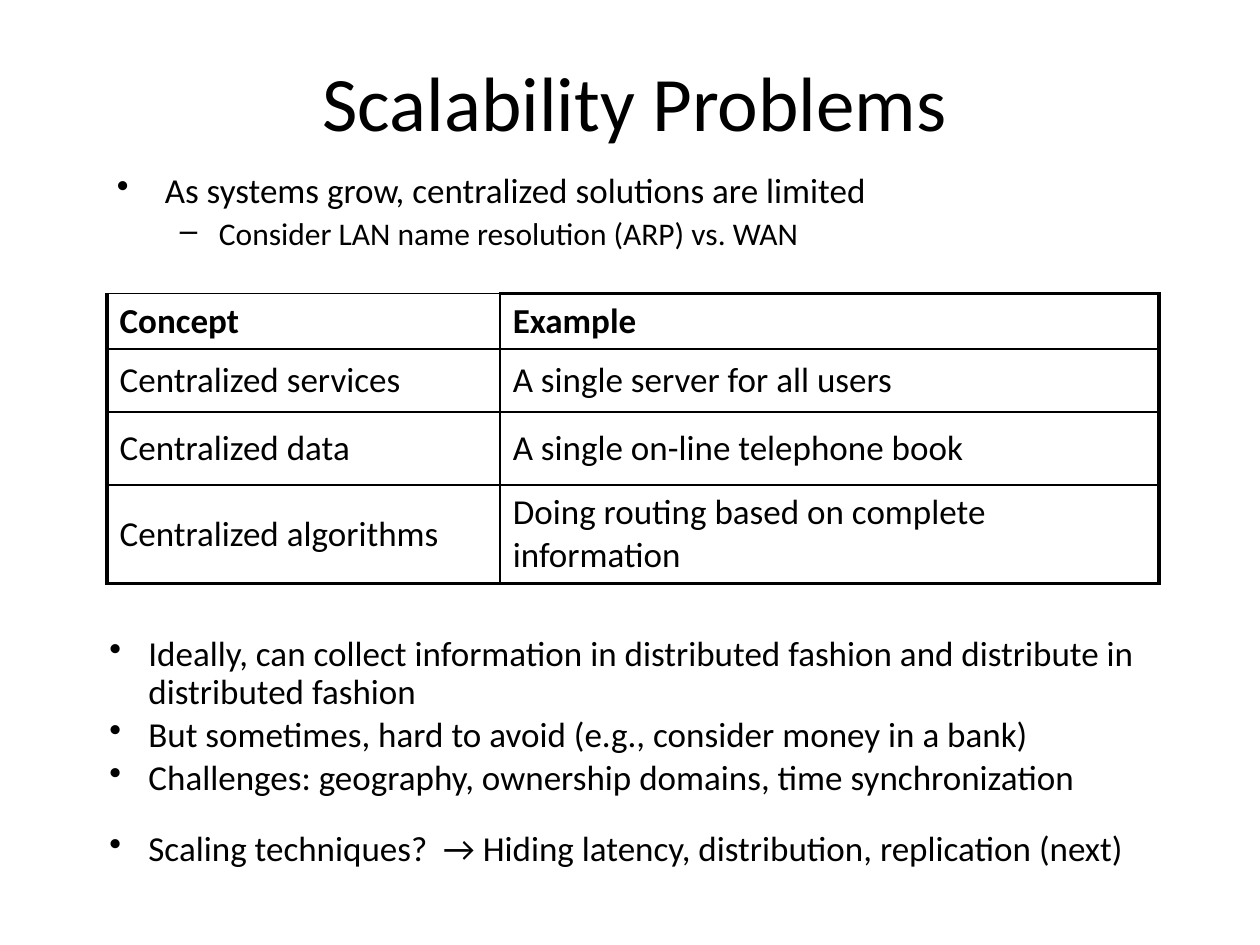
from lxml import etree
from pptx import Presentation
from pptx.dml.color import RGBColor
from pptx.enum import text
from pptx.oxml import ns
from pptx.util import Inches, Pt

BLACK = RGBColor(0, 0, 0)
WHITE = RGBColor(255, 255, 255)
FONT = "Calibri"
THIN, THICK = 1, 2.25
COLUMN_WIDTHS = [3.12, 5.23]
ROW_HEIGHTS = [0.44, 0.5, 0.58, 0.78]
CONCEPTS = [
    ("Concept", "Example"),
    ("Centralized services", "A single server for all users"),
    ("Centralized data", "A single on-line telephone book"),
    ("Centralized algorithms", "Doing routing based on complete information"),
]
INTRODUCTION = [
    ("As systems grow, centralized solutions are limited", "•", 20, 0.38, 0.38, 4),
    ("Consider LAN name resolution (ARP) vs. WAN", "–", 18, 0.81, 0.31, 4),
]
CONCLUSIONS = [
    ("Ideally, can collect information in distributed fashion and distribute in "
     "distributed fashion", 3),
    ("But sometimes, hard to avoid (e.g., consider money in a bank)", 3),
    ("Challenges: geography, ownership domains, time synchronization", 3),
    ("Scaling techniques?  → Hiding latency, distribution, replication (next)", 19),
]


def style(para, size, bold=False):
    """Set the common font on a paragraph."""
    font = para.font
    font.name, font.size, font.bold = FONT, Pt(size), bold
    font.color.rgb = BLACK


def add_box(page, left, top, width, height):
    """Add a wrapping text box and return its text frame."""
    box = page.shapes.add_textbox(Inches(left), Inches(top), Inches(width), Inches(height))
    box.text_frame.word_wrap = True
    return box.text_frame


def add_title(page, words):
    """Add the centred slide title."""
    frame = add_box(page, 0.79, 0.17, 8.5, 1.25)
    frame.vertical_anchor = text.MSO_ANCHOR.MIDDLE
    para = frame.paragraphs[0]
    para.text = words
    para.alignment = text.PP_ALIGN.CENTER
    style(para, 44)


def add_bullets(page, place, items):
    """Add a bulleted list with hanging indents."""
    frame = add_box(page, *place)
    for index, (words, mark, size, margin, hang, before) in enumerate(items):
        para = frame.add_paragraph() if index else frame.paragraphs[0]
        para.text = words
        para.line_spacing = 0.9
        para.space_before = Pt(before)
        style(para, size)
        properties = para._p.get_or_add_pPr()
        properties.set("marL", str(Inches(margin)))
        properties.set("indent", str(-Inches(hang)))
        bullet = etree.Element(ns.qn("a:buChar"), char=mark)
        properties.find(ns.qn("a:defRPr")).addprevious(bullet)


def set_borders(cell, widths):
    """Draw black cell borders, given left, right, top and bottom widths."""
    properties = cell._tc.get_or_add_tcPr()
    for index, (side, width) in enumerate(zip("LRTB", widths)):
        line = etree.Element(ns.qn(f"a:ln{side}"), w=str(Pt(width)))
        fill = etree.SubElement(line, ns.qn("a:solidFill"))
        etree.SubElement(fill, ns.qn("a:srgbClr"), val=str(BLACK))
        properties.insert(index, line)


def add_concept_table(page):
    """Add the table of centralized concepts and examples."""
    table = page.shapes.add_table(
        len(CONCEPTS), len(COLUMN_WIDTHS), Inches(0.85), Inches(2.33),
        Inches(sum(COLUMN_WIDTHS)), Inches(sum(ROW_HEIGHTS))).table
    for column, width in zip(table.columns, COLUMN_WIDTHS):
        column.width = Inches(width)
    last = len(CONCEPTS) - 1
    for i, (row, height) in enumerate(zip(table.rows, ROW_HEIGHTS)):
        row.height = Inches(height)
        for j, cell in enumerate(row.cells):
            cell.text = CONCEPTS[i][j]
            cell.vertical_anchor = text.MSO_ANCHOR.MIDDLE
            cell.fill.solid()
            cell.fill.fore_color.rgb = WHITE
            style(cell.text_frame.paragraphs[0], 20, bold=i == 0)
            set_borders(cell, (
                THIN if j else THICK,
                THICK if j else THIN,
                THICK if j and i == 0 else THIN,
                THICK if i == last else THIN))


def main():
    """Build and save the slide."""
    deck = Presentation()
    deck.slide_width, deck.slide_height = Inches(10), Inches(7.5)
    page = deck.slides.add_slide(deck.slide_layouts[6])
    add_title(page, "Scalability Problems")
    add_bullets(page, (0.83, 1.33, 8.5, 1.17), INTRODUCTION)
    add_concept_table(page)
    add_bullets(page, (0.77, 5, 8.5, 1.92),
                [(words, "•", 20, 0.31, 0.31, before) for words, before in CONCLUSIONS])
    deck.save("out.pptx")


if __name__ == "__main__":
    main()
